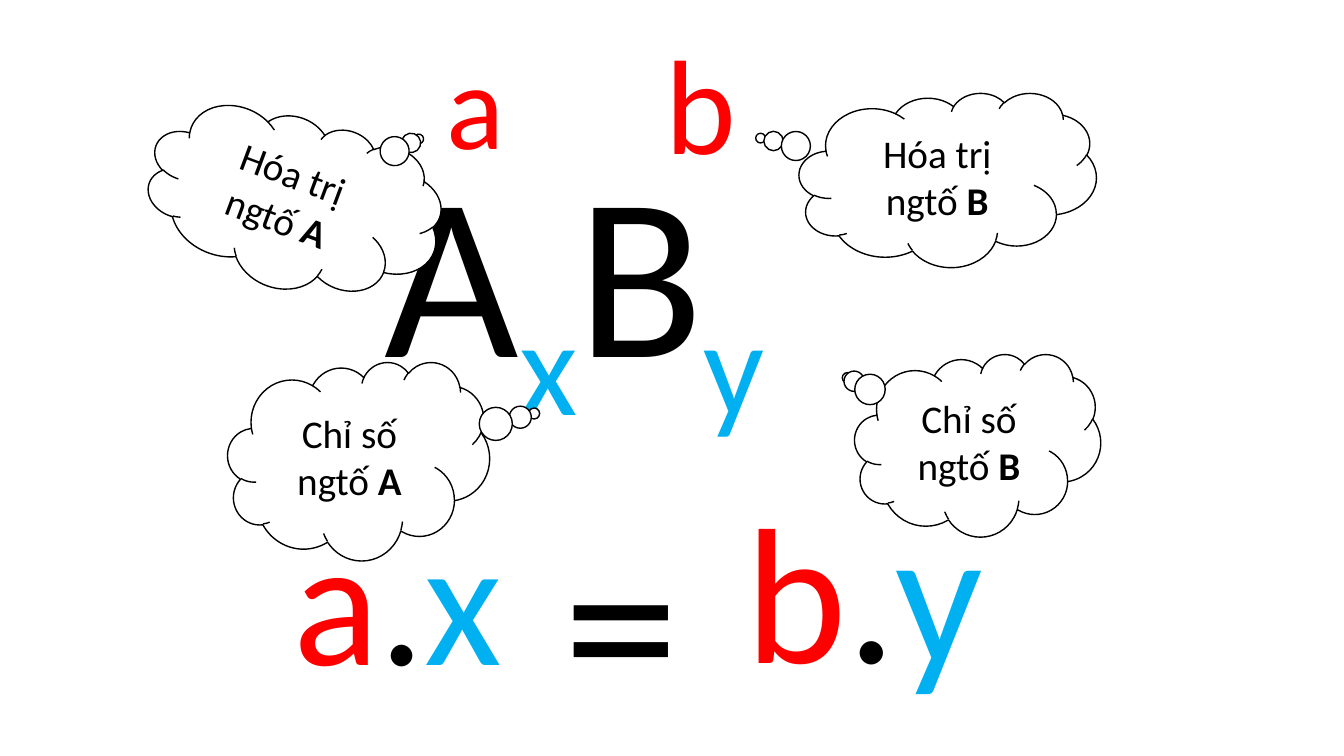
"""Build a slide on the valence rule a.x = b.y for a compound AxBy."""
from lxml import etree
from pptx import Presentation
from pptx.dml.color import RGBColor
from pptx.enum.shapes import MSO_SHAPE
from pptx.enum.text import MSO_ANCHOR, MSO_AUTO_SIZE, PP_ALIGN
from pptx.oxml.ns import qn
from pptx.util import Cm, Pt

RED = RGBColor(0xFF, 0, 0)
BLUE = RGBColor(0, 0xB0, 0xF0)
BLACK = RGBColor(0, 0, 0)
WHITE = RGBColor(0xFF, 0xFF, 0xFF)
LEFT, CENTER = PP_ALIGN.LEFT, PP_ALIGN.CENTER
TOP, MIDDLE = MSO_ANCHOR.TOP, MSO_ANCHOR.MIDDLE
FIXED, GROW = MSO_AUTO_SIZE.NONE, MSO_AUTO_SIZE.SHAPE_TO_FIT_TEXT
CLOUD = MSO_SHAPE.CLOUD_CALLOUT
FONT = "Calibri"

HEAD = ((11, 1.19, 2.03, 3.18), [("a", RED)])
BODY = ((9.14, 3.12, 13.79, 7.54),
        [("A", BLACK), ("x", BLUE), ("B", BLACK), ("y", BLUE)])
MARK = ((16.51, 0.94, 2.03, 3.18), [("b", RED)])
TERMS = [
    ((18.54, 11.73, 6.65, 6.15), 138, [("b", RED), (".", BLACK), ("y", BLUE)]),
    ((7.14, 12.12, 5.97, 5.74), 128, [("a", RED), (".", BLACK), ("x", BLUE)]),
    ((13.94, 11.79, 3.84, 7.34), 166, [("=", BLACK)]),
]
CLOUDS = [
    ((3.66, 2.9, 7.49, 4.39), 20.4, (0.32, -0.59), "Hóa trị ngtố ", "A"),
    ((5.74, 9.12, 6.6, 5), 0, (0.67, -0.24), "Chỉ số ngtố ", "A"),
    ((21.54, 8.92, 6.2, 4.6), 0, (-0.53, -0.37), "Chỉ số ngtố ", "B"),
    ((20.14, 2.34, 7.49, 4.39), 0, (-0.63, -0.24), "Hóa trị ngtố ", "B"),
]


def place(shape, box):
    shape.left, shape.top, shape.width, shape.height = map(Cm, box)


def write(shape, runs, size, align=LEFT, anchor=TOP, wrap=True, fit=FIXED,
          space=None, before=None, bold="", sub=""):
    frame = shape.text_frame
    frame.word_wrap = wrap
    frame.auto_size = fit
    frame.vertical_anchor = anchor
    para = frame.paragraphs[0]
    para.alignment = align
    para.line_spacing = space
    para.space_before = before
    for text, color in runs:
        run = para.add_run()
        run.text = text
        font = run.font
        font.name, font.size = FONT, Pt(size)
        font.color.rgb = color
        if text in bold:
            font.bold = True
        if text in sub:
            font._element.set("baseline", "-25000")
    return para


def main():
    deck = Presentation()
    deck.slide_width, deck.slide_height = Cm(33.87), Cm(19.05)
    slide = deck.slides.add_slide(deck.slide_layouts[1])
    shapes = slide.shapes

    box, runs = HEAD
    place(shapes.title, box)
    write(shapes.title, runs, 86.4, anchor=MIDDLE, space=0.9)

    box, runs = BODY
    body = slide.placeholders[1]
    place(body, box)
    para = write(body, runs, 166, space=0.9, before=Pt(10), sub="xy")
    props = para._p.get_or_add_pPr()
    props.set("marL", str(Cm(0.3)))
    props.set("indent", "0")
    etree.SubElement(props, qn("a:buNone"))

    box, runs = MARK
    write(shapes.add_textbox(*map(Cm, box)), runs, 96, anchor=MIDDLE)

    for box, size, runs in TERMS:
        term = shapes.add_textbox(*map(Cm, box))
        write(term, runs, size, wrap=False, fit=GROW)

    for box, turn, tail, label, name in CLOUDS:
        cloud = shapes.add_shape(CLOUD, *map(Cm, box))
        cloud.rotation = turn
        cloud.adjustments[0], cloud.adjustments[1] = tail
        cloud.shadow.inherit = False
        cloud.fill.solid()
        cloud.fill.fore_color.rgb = WHITE
        cloud.line.color.rgb = BLACK
        cloud.line.width = Pt(1)
        write(cloud, [(label, BLACK), (name, BLACK)], 28,
              align=CENTER, anchor=MIDDLE, bold=name)

    deck.save("out.pptx")


if __name__ == "__main__":
    main()
